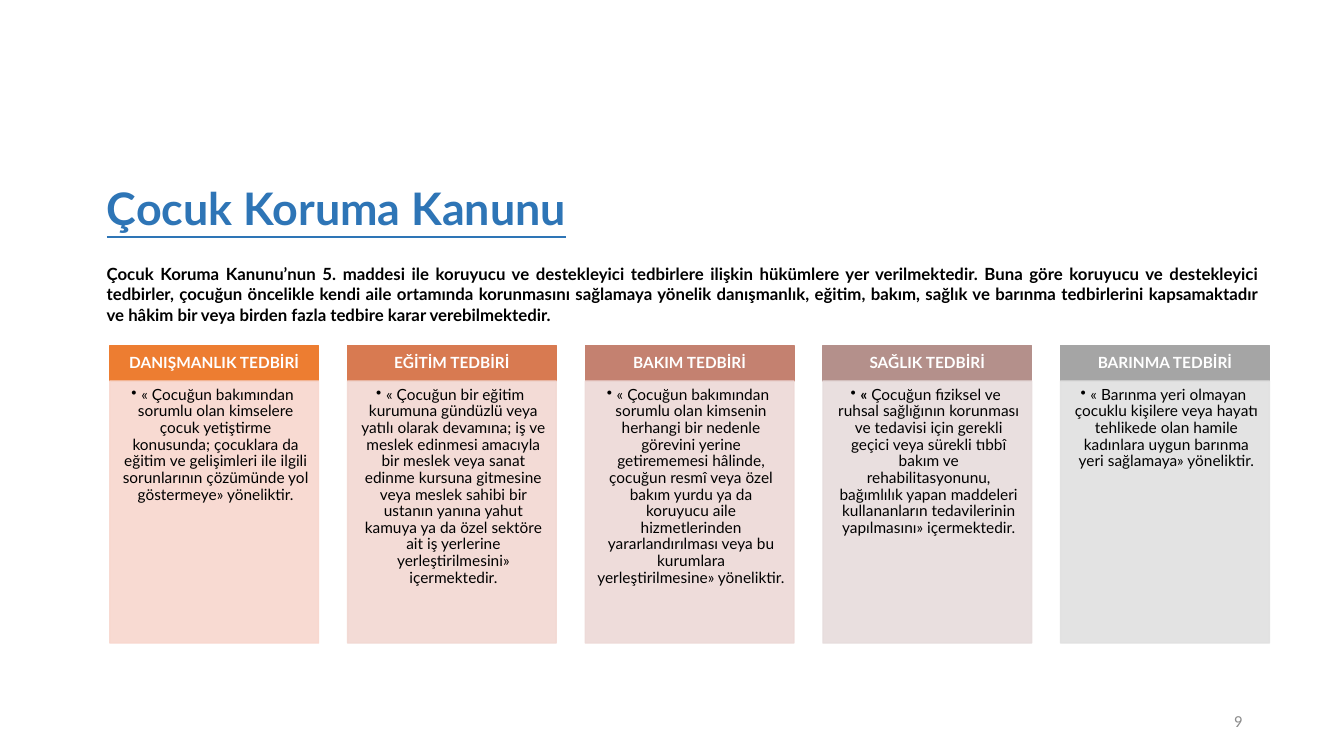
from dataclasses import dataclass

from lxml import etree
from pptx import Presentation
from pptx.dml.color import RGBColor
from pptx.enum.shapes import MSO_SHAPE
from pptx.enum.text import MSO_ANCHOR, MSO_AUTO_SIZE, PP_ALIGN
from pptx.oxml.ns import qn
from pptx.util import Inches, Pt

RECT = MSO_SHAPE.RECTANGLE
TOP, MIDDLE = MSO_ANCHOR.TOP, MSO_ANCHOR.MIDDLE
NO_FIT = MSO_AUTO_SIZE.NONE
LEFT, CENTER, RIGHT, JUSTIFY = PP_ALIGN.LEFT, PP_ALIGN.CENTER, PP_ALIGN.RIGHT, PP_ALIGN.JUSTIFY


@dataclass(frozen=True)
class Theme:
    """Fonts, colours and type sizes of the slide."""
    font: str = "Lato"
    number_font: str = "Calibri"
    title: str = "2E75B6"
    text: str = "000000"
    header_text: str = "FFFFFF"
    number: str = "8C8C8C"
    title_size: int = 32
    intro_size: int = 12
    card_size: int = 11
    number_size: int = 12


THEME = Theme()
CARD_LEFT, CARD_STEP, CARD_WIDTH = 1.09, 2.3575, 2.07
HEADER_TOP, HEADER_HEIGHT, BODY_HEIGHT = 3.43, 0.35, 2.6
BODY_ALPHA = 90

INTRO = (
    "Çocuk Koruma Kanunu’nun 5. maddesi ile koruyucu ve destekleyici tedbirlere ilişkin "
    "hükümlere yer verilmektedir. Buna göre koruyucu ve destekleyici tedbirler, çocuğun "
    "öncelikle kendi aile ortamında korunmasını sağlamaya yönelik danışmanlık, eğitim, bakım, "
    "sağlık ve barınma tedbirlerini kapsamaktadır ve hâkim bir veya birden fazla tedbire karar "
    "verebilmektedir."
)

MEASURES = [
    ("DANIŞMANLIK TEDBİRİ", "ED7D31", "F8D7CE", [
        (" « Çocuğun bakımından sorumlu olan kimselere çocuk yetiştirme konusunda; çocuklara da "
         "eğitim ve gelişimleri ile ilgili sorunlarının çözümünde yol göstermeye» yöneliktir.",
         False)]),
    ("EĞİTİM TEDBİRİ", "D87A51", "F2D8D2", [
        (" « Çocuğun bir eğitim kurumuna gündüzlü veya yatılı olarak devamına; iş ve meslek "
         "edinmesi amacıyla bir meslek veya sanat edinme kursuna gitmesine veya meslek sahibi bir "
         "ustanın yanına yahut kamuya ya da özel sektöre ait iş yerlerine yerleştirilmesini» "
         "içermektedir.", False)]),
    ("BAKIM TEDBİRİ", "C48170", "EDD9D7", [
        (" « Çocuğun bakımından sorumlu olan kimsenin herhangi bir nedenle görevini yerine "
         "getirememesi hâlinde, çocuğun resmî veya özel bakım yurdu ya da koruyucu aile "
         "hizmetlerinden yararlandırılması veya bu kurumlara yerleştirilmesine» yöneliktir.",
         False)]),
    ("SAĞLIK TEDBİRİ", "B4908B", "E7DCDC", [
        (" « ", True),
        ("Çocuğun fiziksel ve ruhsal sağlığının korunması ve tedavisi için gerekli geçici veya "
         "sürekli tıbbî bakım ve rehabilitasyonunu, bağımlılık yapan maddeleri kullananların "
         "tedavilerinin yapılmasını» içermektedir.", False)]),
    ("BARINMA TEDBİRİ", "A5A5A5", "E1E1E1", [
        (" « Barınma yeri olmayan çocuklu kişilere veya hayatı tehlikede olan hamile kadınlara "
         "uygun barınma yeri sağlamaya» yöneliktir.", False)]),
]


def add_bullet(p, indent):
    """Give a paragraph a hanging round bullet."""
    pPr = p._p.get_or_add_pPr()
    pPr.set("marL", str(Inches(indent)))
    pPr.set("indent", str(-Inches(indent)))
    etree.SubElement(pPr, qn("a:buChar")).set("char", "•")


def write_text(sp, runs, *, size, color, font=THEME.font, underline=False, align=LEFT,
               anchor=TOP, spacing=1.0, insets=(0.1, 0.05, 0.1, 0.05), bullet=False):
    """Write (text, bold) runs as one formatted paragraph of a shape."""
    tf = sp.text_frame
    tf.word_wrap = True
    tf.auto_size = NO_FIT
    tf.vertical_anchor = anchor
    tf.margin_left, tf.margin_top, tf.margin_right, tf.margin_bottom = map(Inches, insets)
    p = tf.paragraphs[0]
    if bullet:
        add_bullet(p, 0.06)
    p.alignment = align
    p.line_spacing = spacing
    for text, bold in runs:
        r = p.add_run()
        r.text = text
        r.font.name = font
        r.font.size = Pt(size)
        r.font.bold = bold
        r.font.underline = underline
        r.font.color.rgb = RGBColor.from_string(color)


def add_box(slide, left, top, width, height, color, alpha=100):
    """Add a rectangle whose fill and outline share one colour."""
    sp = slide.shapes.add_shape(RECT, *map(Inches, (left, top, width, height)))
    sp.shadow.inherit = False
    sp.fill.solid()
    sp.line.width = Pt(1)
    for paint in (sp.fill.fore_color, sp.line.color):
        paint.rgb = RGBColor.from_string(color)
    if alpha < 100:
        for clr in sp._element.spPr.iter(qn("a:srgbClr")):
            etree.SubElement(clr, qn("a:alpha")).set("val", str(alpha * 1000))
    return sp


def add_text(slide, left, top, width, height, text, *, bold=False, **style):
    """Add a text box with one run of text."""
    sp = slide.shapes.add_textbox(*map(Inches, (left, top, width, height)))
    write_text(sp, [(text, bold)], **style)


def add_title(slide, text):
    """Place and format the title placeholder."""
    sp = slide.shapes.title
    sp.left, sp.top, sp.width, sp.height = map(Inches, (0.96, 1.82, 11.5, 0.55))
    write_text(sp, [(text, True)], size=THEME.title_size, color=THEME.title,
               underline=True, anchor=MIDDLE, spacing=0.9)


def add_card(slide, left, name, header_color, body_color, runs):
    """Add one measure: a coloured header over a pale body."""
    header = add_box(slide, left, HEADER_TOP, CARD_WIDTH, HEADER_HEIGHT, header_color)
    write_text(header, [(name, True)], size=THEME.card_size, color=THEME.header_text,
               align=CENTER, anchor=MIDDLE, spacing=0.9, insets=(0.09, 0.05, 0.09, 0.05))
    body = add_box(slide, left, HEADER_TOP + HEADER_HEIGHT, CARD_WIDTH, BODY_HEIGHT,
                   body_color, BODY_ALPHA)
    write_text(body, runs, size=THEME.card_size, color=THEME.text, align=CENTER,
               spacing=0.9, insets=(0.06, 0.06, 0.09, 0.1), bullet=True)


def main():
    """Build and save the slide."""
    prs = Presentation()
    prs.slide_width, prs.slide_height = Inches(13.33), Inches(7.5)
    slide = prs.slides.add_slide(prs.slide_layouts[5])
    add_title(slide, "Çocuk Koruma Kanunu")
    add_text(slide, 0.96, 2.57, 11.63, 0.8, INTRO, bold=True, size=THEME.intro_size,
             color=THEME.text, align=JUSTIFY)
    for i, measure in enumerate(MEASURES):
        add_card(slide, CARD_LEFT + i * CARD_STEP, *measure)
    add_text(slide, 9.42, 6.95, 3, 0.4, "9", size=THEME.number_size, color=THEME.number,
             font=THEME.number_font, align=RIGHT, anchor=MIDDLE)
    prs.save("out.pptx")


if __name__ == "__main__":
    main()
